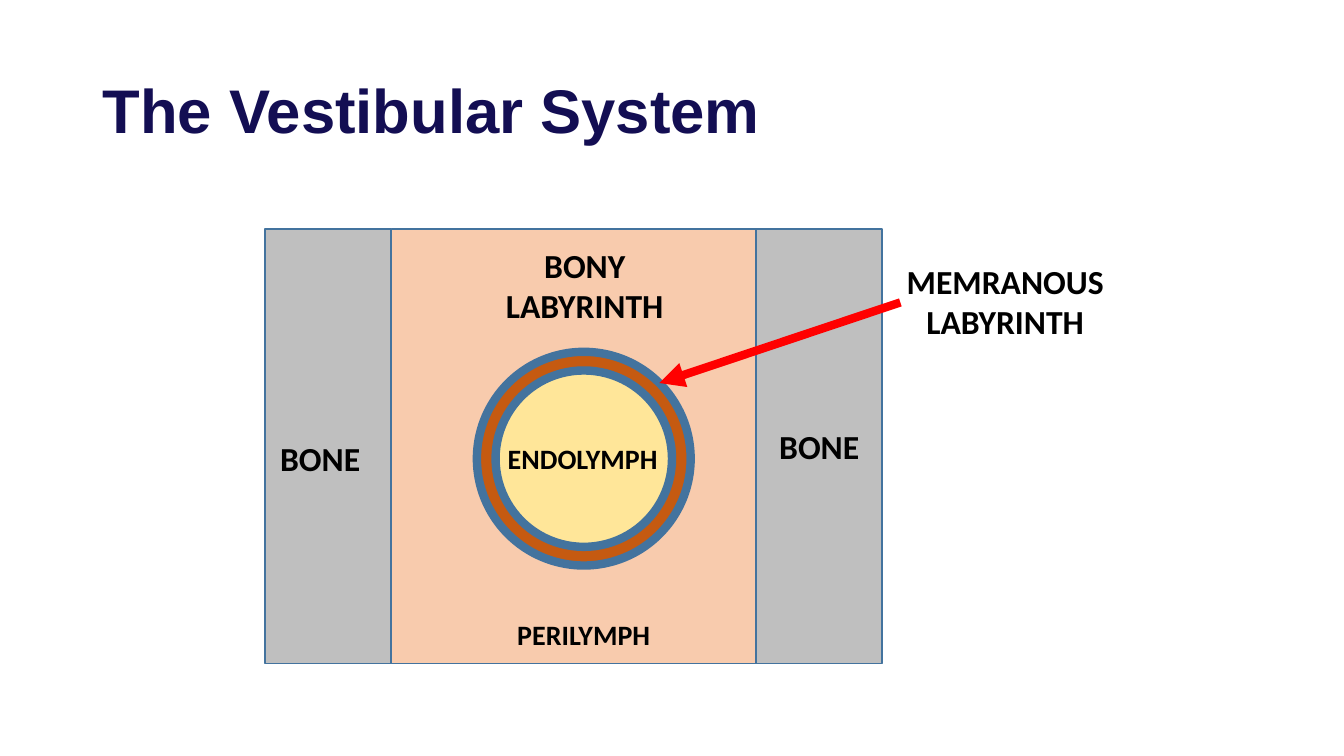
from lxml.etree import SubElement
from pptx import Presentation
from pptx.dml.color import RGBColor
from pptx.enum.shapes import MSO_CONNECTOR, MSO_SHAPE
from pptx.enum.text import MSO_ANCHOR, PP_ALIGN
from pptx.oxml.ns import qn
from pptx.util import Inches, Pt

COLORS = {
    "title": "130E53",
    "label": "000000",
    "outline": "43739E",
    "bone": "BFBFBF",
    "perilymph": "F8CBAD",
    "membrane": "C55A11",
    "endolymph": "FFE699",
    "arrow": "FF0000",
}


def rgb(name):
    return RGBColor.from_string(COLORS[name])


class Diagram:
    """Draws styled elements on one slide."""

    label_font = "Calibri"
    title_font = "Arial"

    def __init__(self, slide):
        self.slide = slide

    def area(self, kind, left, top, width, height, fill, line_width):
        shape = self.slide.shapes.add_shape(
            kind, Inches(left), Inches(top), Inches(width), Inches(height))
        shape.shadow.inherit = False
        shape.fill.solid()
        shape.fill.fore_color.rgb = rgb(fill)
        shape.line.color.rgb = rgb("outline")
        shape.line.width = Pt(line_width)

    def circle(self, center_x, center_y, diameter, fill):
        self.area(MSO_SHAPE.OVAL, center_x - diameter / 2, center_y - diameter / 2,
                  diameter, diameter, fill, 6)

    def text(self, words, left, top, width, height, size, font, color):
        box = self.slide.shapes.add_textbox(
            Inches(left), Inches(top), Inches(width), Inches(height))
        frame = box.text_frame
        frame.word_wrap = True
        frame.text = words
        paragraph = frame.paragraphs[0]
        paragraph.font.name = font
        paragraph.font.size = Pt(size)
        paragraph.font.bold = True
        paragraph.font.color.rgb = rgb(color)
        return frame

    def title(self, words, left, top, width, height):
        frame = self.text(words, left, top, width, height, 44, self.title_font, "title")
        frame.vertical_anchor = MSO_ANCHOR.MIDDLE
        frame.paragraphs[0].line_spacing = 0.9

    def label(self, words, left, top, width, height, size=24):
        frame = self.text(words, left, top, width, height, size, self.label_font, "label")
        frame.paragraphs[0].alignment = PP_ALIGN.CENTER

    def arrow(self, start_x, start_y, end_x, end_y):
        connector = self.slide.shapes.add_connector(
            MSO_CONNECTOR.STRAIGHT, Inches(start_x), Inches(start_y),
            Inches(end_x), Inches(end_y))
        connector.line.color.rgb = rgb("arrow")
        connector.line.width = Pt(6)
        SubElement(connector.line._get_or_add_ln(), qn("a:tailEnd"), type="triangle")
        SubElement(connector._element.spPr, qn("a:effectLst"))


def main():
    presentation = Presentation()
    presentation.slide_width = Inches(13.33)
    presentation.slide_height = Inches(7.5)
    slide = presentation.slides.add_slide(presentation.slide_layouts[6])
    diagram = Diagram(slide)

    diagram.title("The Vestibular System", 0.92, 0.4, 11.5, 1.45)

    top, height = 2.27, 4.31
    bone_width, canal_left, canal_width = 1.25, 3.88, 3.62
    canal_right = canal_left + canal_width
    diagram.area(MSO_SHAPE.RECTANGLE, canal_left, top, canal_width, height, "perilymph", 1)
    for bone_left in (canal_left - bone_width, canal_right):
        diagram.area(MSO_SHAPE.RECTANGLE, bone_left, top, bone_width, height, "bone", 1)

    for diameter, fill in ((2.12, "membrane"), (1.75, "endolymph")):
        diagram.circle(5.79, 4.55, diameter, fill)

    diagram.label("BONE", 2.55, 4.3, bone_width, 0.5)
    diagram.label("BONE", canal_right, 4.18, bone_width, 0.5)
    diagram.label("PERILYMPH", 4.84, 6.08, 1.9, 0.44, size=20)
    diagram.label("BONY LABYRINTH", 4.85, 2.38, 1.9, 0.91)
    diagram.label("MEMRANOUS LABYRINTH", 8.59, 2.54, 2.76, 0.91)
    diagram.arrow(8.93, 3, 6.54, 3.8)
    diagram.label("ENDOLYMPH", 4.83, 4.33, 1.9, 0.44, size=20)

    presentation.save("out.pptx")


if __name__ == "__main__":
    main()
